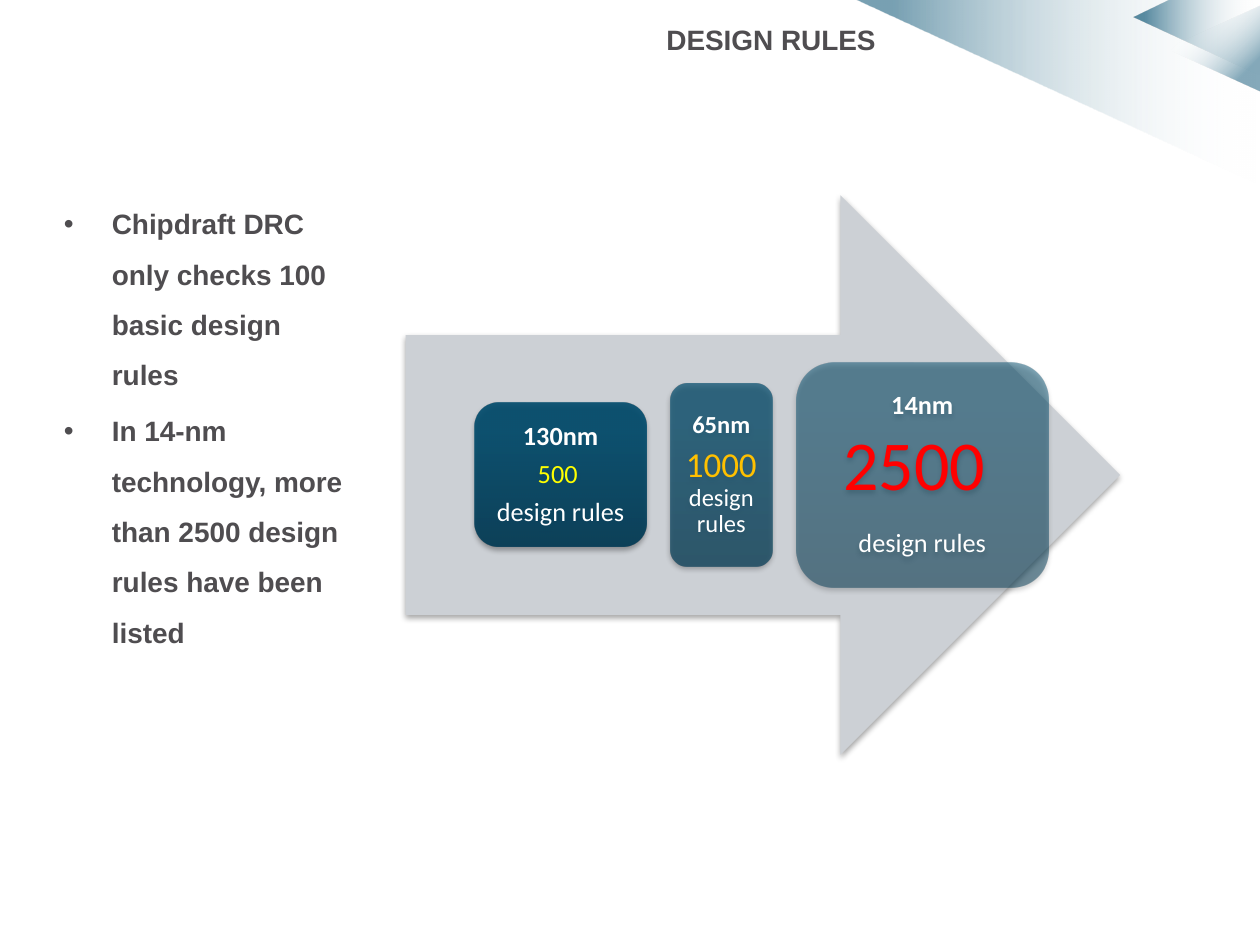
from lxml import etree
from pptx import Presentation
from pptx.dml.color import RGBColor
from pptx.enum import shapes, text
from pptx.oxml import ns
from pptx.util import Inches, Pt

COLORS = {
    "text": "4F4D50", "white": "FFFFFF", "arrow": "CCD0D5",
    "deep": "003953", "blue": "004B6C", "corner": "004D6F",
    "yellow": "FFFF00", "amber": "FFC000", "red": "FF0000", "black": "000000",
}
SHAPE = shapes.MSO_SHAPE
ALIGN = text.PP_ALIGN


def rgb(name):
    return RGBColor.from_string(COLORS[name])


def sub(parent, tag, **attrs):
    el = etree.SubElement(parent, ns.qn(tag))
    for key, value in attrs.items():
        el.set(key, str(value))
    return el


def add_color(parent, name, alpha):
    color = sub(parent, "a:srgbClr", val=COLORS[name])
    sub(color, "a:alpha", val=alpha * 1000)


def set_gradient(sp, stops, angle):
    """Stops are (position %, colour name, opacity %); angle is clockwise."""
    sp.fill.gradient()
    grad = sp.fill._xPr.find(ns.qn("a:gradFill"))
    for child in list(grad):
        grad.remove(child)
    gs_list = sub(grad, "a:gsLst")
    for position, name, alpha in stops:
        add_color(sub(gs_list, "a:gs", pos=position * 1000), name, alpha)
    sub(grad, "a:lin", ang=angle * 60000, scaled=0)


def finish(sp, shadow=False):
    """Drop the outline, and set either no shadow or a soft one below."""
    sp.line.fill.background()
    sp.shadow.inherit = False
    if shadow:
        effects = sp._element.spPr.find(ns.qn("a:effectLst"))
        outer = sub(effects, "a:outerShdw", blurRad=Pt(3.1), dist=Pt(1.8),
                    dir=90 * 60000, rotWithShape=0)
        add_color(outer, "black", 35)


def add_shape(s, kind, x, y, w, h):
    return s.shapes.add_shape(kind, Inches(x), Inches(y), Inches(w), Inches(h))


def write(tf, paragraphs, font="Arial", align=ALIGN.LEFT, spacing=None,
          before=0, after=0, bullet=None, indent=0.38):
    """Each paragraph is a list of (text, size, colour, bold) runs.
    before and after are fractions of the first run's size."""
    tf.word_wrap = True
    for i, runs in enumerate(paragraphs):
        p = tf.add_paragraph() if i else tf.paragraphs[0]
        if bullet:
            pPr = p._p.get_or_add_pPr()
            pPr.set("marL", str(Inches(indent)))
            pPr.set("indent", str(-Inches(indent)))
            sub(pPr, "a:buFont", typeface="Arial")
            sub(pPr, "a:buChar", char=bullet)
        p.alignment = align
        p.line_spacing = spacing
        size = runs[0][1]
        if i and before:
            p.space_before = Pt(before * size)
        if after:
            p.space_after = Pt(after * size)
        for words, size, color, bold in runs:
            r = p.add_run()
            r.text = words
            r.font.name, r.font.size, r.font.bold = font, Pt(size), bold
            r.font.color.rgb = rgb(color)


def add_text(s, x, y, w, h, paragraphs, **fmt):
    box = s.shapes.add_textbox(Inches(x), Inches(y), Inches(w), Inches(h))
    write(box.text_frame, paragraphs, **fmt)


def corner_art(s, right):
    """Fading blue facets in the top right corner."""
    facets = [
        ([(0, 1.47), (-3.21, 0), (0, 0)], 53),
        ([(0, 0.6), (-1, 0.14), (-0.71, 0), (0, 0)], 63),
    ]
    for points, alpha in facets:
        points = [(Inches(right + x), Inches(y)) for x, y in points]
        builder = s.shapes.build_freeform(*points[0], scale=1.0)
        builder.add_line_segments(points[1:], close=True)
        sp = builder.convert_to_shape()
        set_gradient(sp, [(1, "white", 0), (91, "corner", alpha)], 180)
        finish(sp)
    sp = add_shape(s, SHAPE.ISOSCELES_TRIANGLE, right - 0.71, 0.01, 0.68, 0.75)
    sp.rotation = 270
    set_gradient(sp, [(27, "white", 0), (81, "corner", 48)], 135)
    finish(sp)


def rule_card(s, x, middle, w, h, alpha, paragraphs):
    sp = add_shape(s, SHAPE.ROUNDED_RECTANGLE, x, middle - h / 2, w, h)
    set_gradient(sp, [(0, "deep", alpha), (80, "blue", alpha),
                      (100, "blue", alpha)], 270)
    finish(sp, shadow=True)
    tf = sp.text_frame
    tf.margin_left = tf.margin_right = Inches(0.06)
    tf.margin_top = tf.margin_bottom = Inches(0.06)
    tf.vertical_anchor = text.MSO_ANCHOR.MIDDLE
    write(tf, paragraphs, font="Calibri", align=ALIGN.CENTER,
          spacing=0.9, after=0.35)


def growth_arrow(s, x, y, w, h):
    """Arrow with one card per technology node, growing to the right."""
    arrow = add_shape(s, SHAPE.RIGHT_ARROW, x, y, w, h)
    arrow.fill.solid()
    arrow.fill.fore_color.rgb = rgb("arrow")
    finish(arrow, shadow=True)

    label = "design rules"
    cards = [
        (1.36, 1.14, 90, [[("130nm", 15, "white", True)],
                          [("500 ", 15, "yellow", False)],
                          [(label, 15, "white", False)]]),
        (0.81, 1.45, 70, [[("65nm", 14, "white", True)],
                          [("1000 ", 20, "amber", False),
                           (label, 14, "white", False)]]),
        (2, 1.78, 50, [[("14nm", 15, "white", True)],
                       [("2500 ", 40, "red", False)],
                       [(label, 15, "white", False)]]),
    ]
    left, gap = x + 0.55, 0.19
    for card_w, card_h, alpha, paragraphs in cards:
        rule_card(s, left, y + h / 2, card_w, card_h, alpha, paragraphs)
        left += card_w + gap


def main():
    prs = Presentation()
    prs.slide_width, prs.slide_height = Inches(10), Inches(7.5)
    s = prs.slides.add_slide(prs.slide_layouts[6])

    corner_art(s, 10)
    # Bullets and title
    points = ["Chipdraft DRC only checks 100 basic design rules",
              "In 14-nm technology, more than 2500 design rules have been listed"]
    add_text(s, 0.41, 1.46, 2.46, 5.13,
             [[(point, 16, "text", True)] for point in points],
             spacing=1.5, before=0.2, bullet="•")
    add_text(s, 2.01, 0.13, 5.04, 0.46,
             [[("DESIGN RULES", 16, "text", True)]], align=ALIGN.RIGHT)
    growth_arrow(s, 3.22, 1.55, 5.67, 4.44)

    prs.save("out.pptx")


if __name__ == "__main__":
    main()
